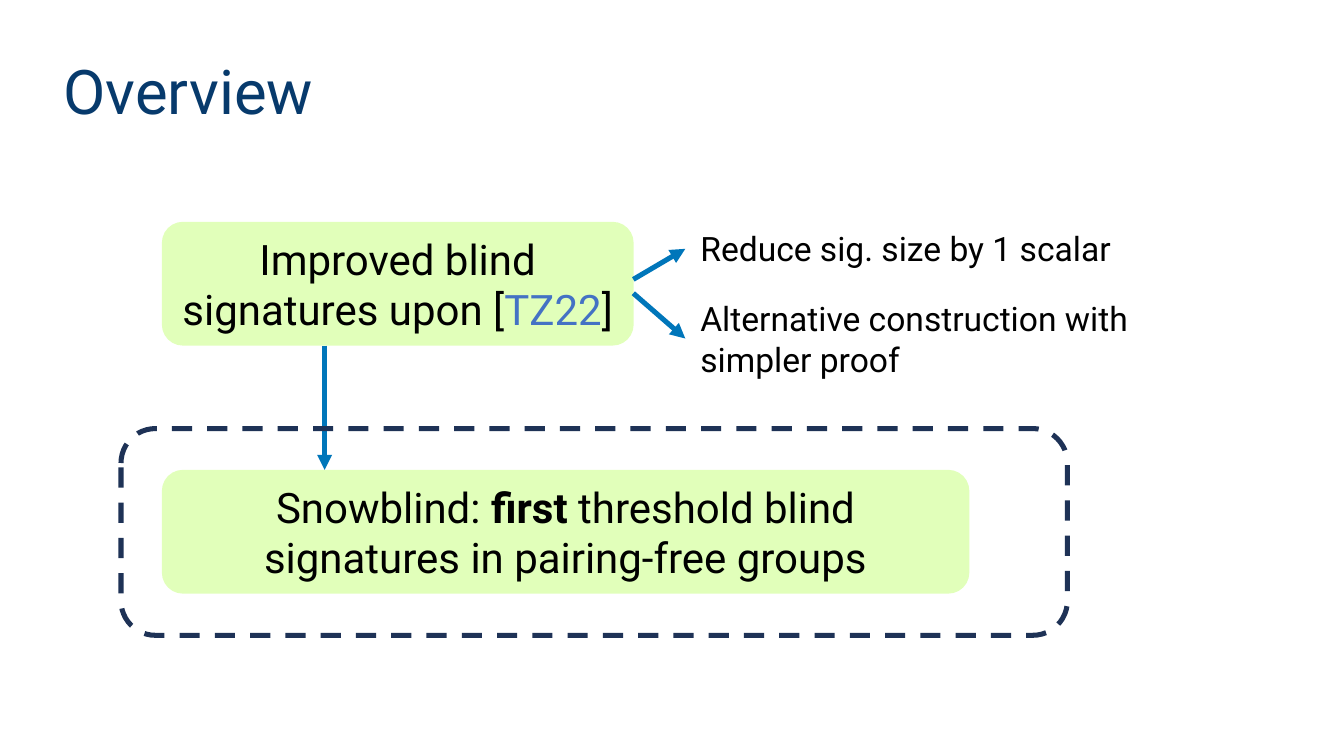
import pptx
import pptx.util
import pptx.dml.color
import pptx.enum.dml
import pptx.enum.shapes
import pptx.enum.text
import pptx.oxml
import pptx.oxml.ns

Cm = pptx.util.Cm
Pt = pptx.util.Pt
RGB = pptx.dml.color.RGBColor.from_string
ANCHOR = pptx.enum.text.MSO_ANCHOR
ALIGN = pptx.enum.text.PP_ALIGN
ROUNDED = pptx.enum.shapes.MSO_SHAPE.ROUNDED_RECTANGLE

THEME = {
    "font": "Roboto",
    "title": "073A6C",
    "text": "000000",
    "cite": "4472C4",
    "box": "E1FFBA",
    "arrow": "0076BA",
    "frame": "1E3256",
    "title_size": 44,
    "box_size": 30,
    "note_size": 24,
    "line_width": 3.6,
}


def add_text(sp, runs, size, anchor, align):
    tf = sp.text_frame
    tf.word_wrap = True
    tf.vertical_anchor = anchor
    p = tf.paragraphs[0]
    p.alignment = align
    for text, color, bold in runs:
        r = p.add_run()
        r.text = text
        r.font.name = THEME["font"]
        r.font.size = Pt(THEME[size])
        r.font.color.rgb = RGB(THEME[color])
        r.font.bold = bold
    return p


prs = pptx.Presentation()
prs.slide_width = Cm(33.87)
prs.slide_height = Cm(19.05)
s = prs.slides.add_slide(prs.slide_layouts[6])

title = s.shapes.add_textbox(Cm(1.35), Cm(1.02), Cm(31.83), Cm(2.72))
p = add_text(title, [("Overview", "title", False)], "title_size", ANCHOR.MIDDLE, ALIGN.LEFT)
p.line_spacing = 0.9

boxes = [
    (5.59, 11.89, [
        ("Improved blind signatures upon [", "text", False),
        ("TZ22", "cite", False),
        ("]", "text", False),
    ]),
    (11.84, 20.35, [
        ("Snowblind: ", "text", False),
        ("first", "text", True),
        (" threshold blind signatures in pairing-free groups", "text", False),
    ]),
]
for top, width, runs in boxes:
    sp = s.shapes.add_shape(ROUNDED, Cm(4.08), Cm(top), Cm(width), Cm(3.12))
    sp.adjustments[0] = 0.17
    sp.shadow.inherit = False
    sp.fill.solid()
    sp.fill.fore_color.rgb = RGB(THEME["box"])
    sp.line.fill.background()
    add_text(sp, runs, "box_size", ANCHOR.MIDDLE, ALIGN.CENTER)

notes = [
    (5.61, 12.55, 1.32, "Reduce sig. size by 1 scalar"),
    (7.39, 13.41, 2.31, "Alternative construction with simpler proof"),
]
for top, width, height, text in notes:
    sp = s.shapes.add_textbox(Cm(17.4), Cm(top), Cm(width), Cm(height))
    add_text(sp, [(text, "text", False)], "note_size", ANCHOR.TOP, ALIGN.LEFT)

arrows = [
    (8.18, 8.71, 8.18, 11.84),
    (15.96, 7.04, 17.27, 6.27),
    (15.96, 7.39, 17.27, 8.53),
]
for ends in arrows:
    arrow = s.shapes.add_connector(
        pptx.enum.shapes.MSO_CONNECTOR.STRAIGHT, *[Cm(v) for v in ends])
    arrow.line.color.rgb = RGB(THEME["arrow"])
    arrow.line.width = Pt(THEME["line_width"])
    ln = arrow.line._get_or_add_ln()
    tail = pptx.oxml.parse_xml(
        f'<a:tailEnd {pptx.oxml.ns.nsdecls("a")} type="triangle"/>')
    ln.append(tail)
    effects = pptx.oxml.parse_xml(f'<a:effectLst {pptx.oxml.ns.nsdecls("a")}/>')
    ln.addnext(effects)

frame = s.shapes.add_shape(ROUNDED, Cm(3.05), Cm(10.8), Cm(23.85), Cm(5.21))
frame.shadow.inherit = False
frame.fill.background()
frame.line.color.rgb = RGB(THEME["frame"])
frame.line.width = Pt(THEME["line_width"])
frame.line.dash_style = pptx.enum.dml.MSO_LINE.DASH

prs.save("out.pptx")
